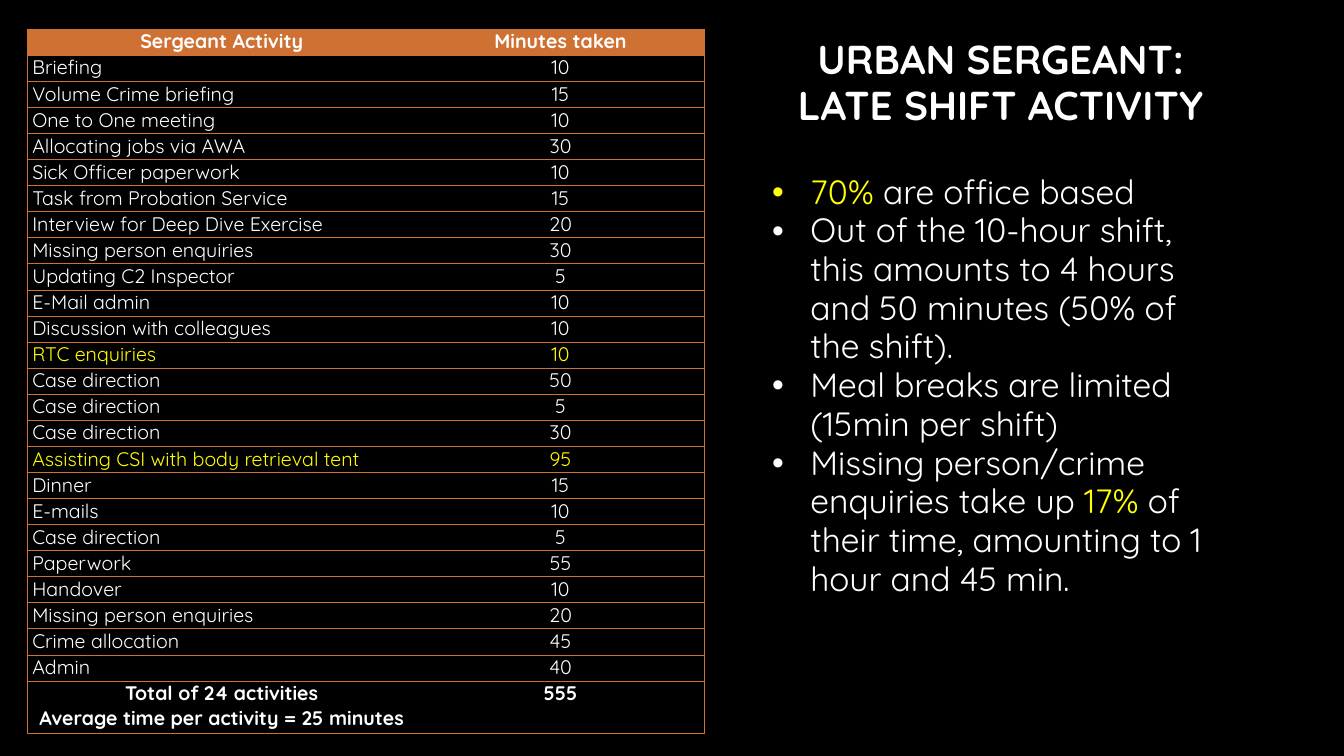
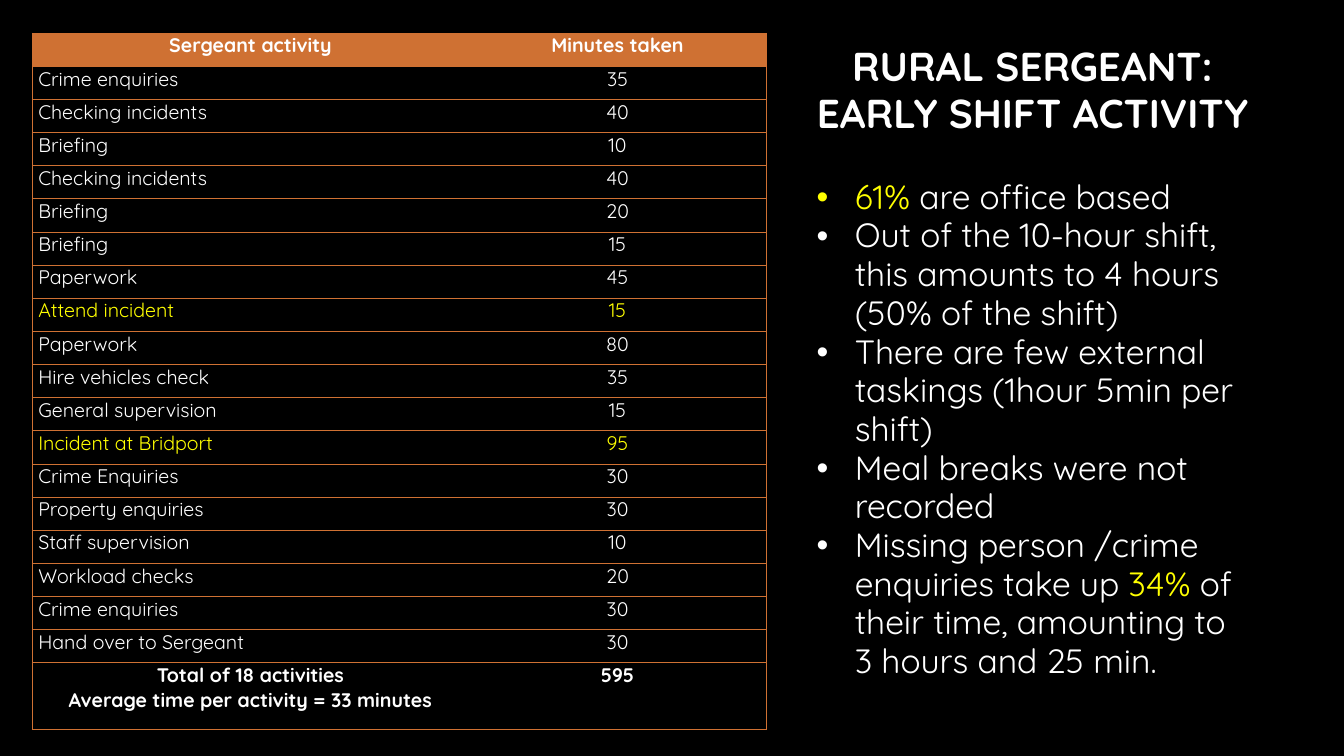
from lxml.etree import SubElement
from pptx import Presentation
from pptx.dml.color import RGBColor
from pptx.enum.text import MSO_ANCHOR, PP_ALIGN
from pptx.oxml.ns import qn
from pptx.util import Inches, Pt

WHITE = RGBColor(0xFF, 0xFF, 0xFF)
BLACK = RGBColor(0x00, 0x00, 0x00)
YELLOW = RGBColor(0xFF, 0xFF, 0x00)
ORANGE = RGBColor(0xCF, 0x71, 0x33)
FONT = "Quicksand"
PLAIN_TABLE = "{2D5ABB26-0587-4C30-8999-92F81FD0307C}"  # no style, no grid

# Activities and minutes of each shift
URBAN_ROWS = [
    ("Briefing", 10), ("Volume Crime briefing", 15), ("One to One meeting", 10),
    ("Allocating jobs via AWA", 30), ("Sick Officer paperwork", 10),
    ("Task from Probation Service", 15), ("Interview for Deep Dive Exercise", 20),
    ("Missing person enquiries", 30), ("Updating C2 Inspector", 5),
    ("E-Mail admin", 10), ("Discussion with colleagues", 10),
    ("RTC enquiries", 10), ("Case direction", 50), ("Case direction", 5),
    ("Case direction", 30), ("Assisting CSI with body retrieval tent", 95),
    ("Dinner", 15), ("E-mails", 10), ("Case direction", 5), ("Paperwork", 55),
    ("Handover", 10), ("Missing person enquiries", 20),
    ("Crime allocation", 45), ("Admin", 40),
]
RURAL_ROWS = [
    ("Crime enquiries", 35), ("Checking incidents", 40), ("Briefing", 10),
    ("Checking incidents", 40), ("Briefing", 20), ("Briefing", 15),
    ("Paperwork", 45), ("Attend incident", 15), ("Paperwork", 80),
    ("Hire vehicles check", 35), ("General supervision", 15),
    ("Incident at Bridport", 95), ("Crime Enquiries", 30),
    ("Property enquiries", 30), ("Staff supervision", 10),
    ("Workload checks", 20), ("Crime enquiries", 30),
    ("Hand over to Sergeant", 30),
]
EXTERNAL_TASKS = {"RTC enquiries", "Assisting CSI with body retrieval tent",
                  "Attend incident", "Incident at Bridport"}

# Findings, with highlighted figures between asterisks
URBAN_FINDINGS = [
    "*70%* are office based",
    "Out of the 10-hour shift, this amounts to 4 hours and 50 minutes "
    "(50% of the shift).",
    "Meal breaks are limited (15min per shift)",
    "Missing person/crime enquiries take up *17%* of their time, "
    "amounting to 1 hour and 45 min.",
]
RURAL_FINDINGS = [
    "*61%* are office based",
    "Out of the 10-hour shift, this amounts to 4 hours (50% of the shift)",
    "There are few external taskings (1hour 5min per shift)",
    "Meal breaks were not recorded",
    "Missing person /crime enquiries take up *34%* of their time, "
    "amounting to 3 hours and 25 min.",
]


def write(para, text, size=14, color=WHITE, bold=False, align=PP_ALIGN.LEFT):
    """Add text to a paragraph; parts between asterisks turn yellow."""
    para.alignment = align
    for index, part in enumerate(text.split("*")):
        if part:
            span = para.add_run()
            span.text = part
            span.font.name = FONT
            span.font.size = Pt(size)
            span.font.bold = bold
            span.font.color.rgb = YELLOW if index % 2 else color


def draw_borders(cell, sides):
    """Draw thin orange lines on the given sides, named in schema order."""
    props = cell._tc.get_or_add_tcPr()
    for index, side in enumerate(sides):
        line = SubElement(props, qn(f"a:ln{side}"), w=str(Pt(0.75)))
        fill = SubElement(line, qn("a:solidFill"))
        SubElement(fill, qn("a:srgbClr"), val=str(ORANGE))
        props.insert(index, line)


class ShiftDeck:
    def __init__(self):
        self.deck = Presentation()
        self.deck.slide_width = Inches(13.33)
        self.deck.slide_height = Inches(7.5)
        self.page = None

    def add_page(self):
        self.page = self.deck.slides.add_slide(self.deck.slide_layouts[6])
        fill = self.page.background.fill
        fill.solid()
        fill.fore_color.rgb = BLACK

    def add_box(self, left, top, width, height):
        box = self.page.shapes.add_textbox(
            Inches(left), Inches(top), Inches(width), Inches(height))
        box.text_frame.word_wrap = True
        return box.text_frame

    def add_title(self, text, *place):
        frame = self.add_box(*place)
        frame.vertical_anchor = MSO_ANCHOR.MIDDLE
        para = frame.paragraphs[0]
        para.line_spacing = 0.96
        write(para, text, size=28.8, bold=True, align=PP_ALIGN.CENTER)

    def add_findings(self, findings, *place):
        frame = self.add_box(*place)
        for index, text in enumerate(findings):
            para = frame.add_paragraph() if index else frame.paragraphs[0]
            para.line_spacing = 0.96
            props = para._p.get_or_add_pPr()
            props.set("marL", str(Inches(0.38)))
            props.set("indent", str(-Inches(0.38)))
            SubElement(props, qn("a:buFont"), typeface="Arial")
            SubElement(props, qn("a:buChar"), char="•")
            write(para, text, size=24)

    def fill_cell(self, cell, lines, inset, sides, **style):
        cell.margin_left = cell.margin_right = Inches(inset)
        cell.margin_top = cell.margin_bottom = 0
        frame = cell.text_frame
        for index, text in enumerate(lines):
            para = frame.add_paragraph() if index else frame.paragraphs[0]
            write(para, text, **style)
        draw_borders(cell, sides)

    def add_activity_table(self, heading, rows, average, left, top, height,
                           columns, inset):
        total = sum(minutes for _, minutes in rows)
        summary = [f"Total of {len(rows)} activities",
                   f"Average time per activity = {average} minutes"]
        lines = [([heading], "Minutes taken")]
        lines += [([name], str(minutes)) for name, minutes in rows]
        lines.append((summary, str(total)))

        shape = self.page.shapes.add_table(
            len(lines), 2, Inches(left), Inches(top),
            Inches(sum(columns)), Inches(height))
        table = shape.table
        table.first_row = table.horz_banding = False
        table._tbl.tblPr.find(qn("a:tableStyleId")).text = PLAIN_TABLE
        for column, width in zip(table.columns, columns):
            column.width = Inches(width)

        # The summary row is two rows high
        unit = Inches(height / (len(lines) + 1))
        last = len(lines) - 1
        for index, (activity, minutes) in enumerate(lines):
            table.rows[index].height = unit * 2 if index == last else unit
            bold = index in (0, last)
            color = YELLOW if activity[0] in EXTERNAL_TASKS else WHITE
            name_align = PP_ALIGN.CENTER if bold else PP_ALIGN.LEFT
            name_cell, minutes_cell = table.cell(index, 0), table.cell(index, 1)
            self.fill_cell(name_cell, activity, inset, "LTB",
                           color=color, bold=bold, align=name_align)
            self.fill_cell(minutes_cell, [minutes], inset, "RTB",
                           color=color, bold=bold, align=PP_ALIGN.CENTER)
            if index == 0:
                for cell in (name_cell, minutes_cell):
                    cell.fill.solid()
                    cell.fill.fore_color.rgb = ORANGE


def main():
    show = ShiftDeck()

    # Urban sergeant
    show.add_page()
    show.add_title("URBAN SERGEANT: LATE SHIFT ACTIVITY", 7.56, 0.29, 4.73, 1.08)
    show.add_activity_table("Sergeant Activity", URBAN_ROWS, 25, left=0.27,
                            top=0.29, height=6.99, columns=(3.86, 2.86), inset=0.05)
    show.add_findings(URBAN_FINDINGS, 7.56, 1.67, 4.73, 4.54)

    # Rural sergeant
    show.add_page()
    show.add_title("RURAL SERGEANT: EARLY SHIFT ACTIVITY", 8, 0.33, 4.48, 1.15)
    show.add_activity_table("Sergeant activity", RURAL_ROWS, 33, left=0.32,
                            top=0.33, height=6.91, columns=(4.33, 2.95), inset=0.06)
    show.add_findings(RURAL_FINDINGS, 8, 1.72, 4.48, 5.35)

    show.deck.save("out.pptx")


if __name__ == "__main__":
    main()
